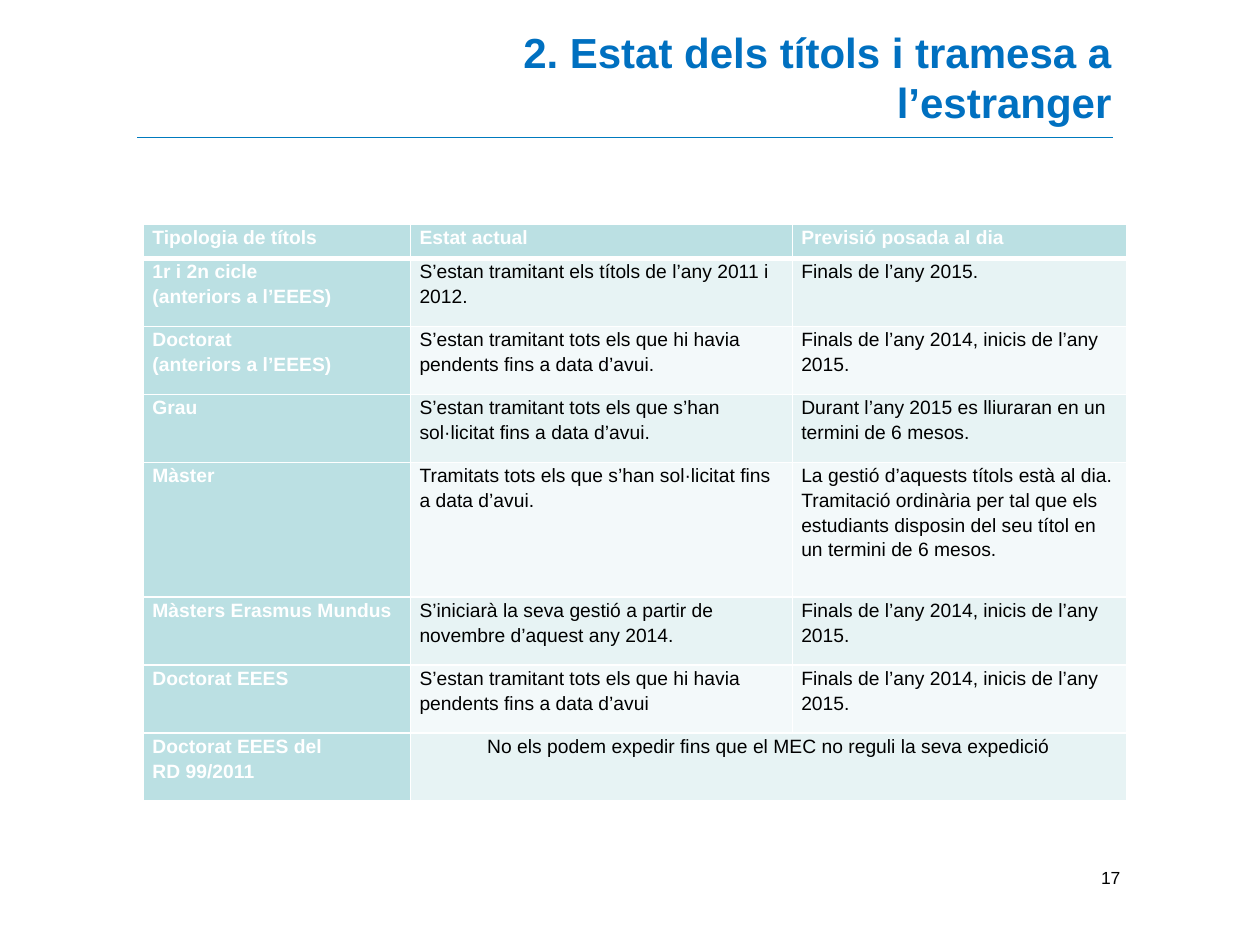
from lxml.etree import SubElement
from pptx import Presentation
from pptx.dml.color import RGBColor
from pptx.enum.shapes import MSO_CONNECTOR
from pptx.enum.text import MSO_ANCHOR, PP_ALIGN
from pptx.oxml import parse_xml
from pptx.oxml.ns import nsdecls, qn
from pptx.util import Inches, Pt

COLORS = {
    "title": "0070C0", "rule": "007ABE", "text": "000000", "white": "FFFFFF",
    "heading": "BBE0E3", "odd_row": "E7F3F4", "even_row": "F3F9FA",
}


def add_run(paragraph, text, size, color, bold=False):
    run = paragraph.add_run()
    run.text = text
    run.font.name = "Arial"
    run.font.size = Pt(size)
    run.font.bold = bold
    run.font.color.rgb = RGBColor.from_string(COLORS[color])


def set_borders(cell, top, bottom):
    """Draw white cell borders; top and bottom are widths in points."""
    properties = cell._tc.get_or_add_tcPr()
    widths = {"lnL": 1, "lnR": 1, "lnT": top, "lnB": bottom}
    for position, (side, width) in enumerate(widths.items()):
        properties.insert(position, parse_xml(
            f'<a:{side} {nsdecls("a")} w="{Pt(width)}"><a:solidFill>'
            f'<a:srgbClr val="{COLORS["white"]}"/></a:solidFill></a:{side}>'))


presentation = Presentation()
presentation.slide_width = Inches(10)
presentation.slide_height = Inches(7.5)
slide = presentation.slides.add_slide(presentation.slide_layouts[6])

# Rule under the title
rule = slide.shapes.add_connector(
    MSO_CONNECTOR.STRAIGHT, Inches(1.09), Inches(1.09), Inches(8.83), Inches(1.09))
rule.line.color.rgb = RGBColor.from_string(COLORS["rule"])
rule.line.width = Pt(0.75)
SubElement(rule._element.spPr, qn("a:effectLst"))

# Table of degree types
ROWS = [
    ["Tipologia de títols", "Estat actual", "Previsió posada al dia"],
    ["1r i 2n cicle\n(anteriors a l’EEES)",
     "S’estan tramitant els títols de l’any 2011 i 2012.",
     "Finals de l’any 2015."],
    ["Doctorat\n(anteriors a l’EEES)",
     "S’estan tramitant tots els que hi havia pendents fins a data d’avui.",
     "Finals de l’any 2014, inicis de l’any 2015."],
    ["Grau",
     "S’estan tramitant tots els que s’han sol·licitat fins a data d’avui.",
     "Durant l’any 2015 es lliuraran en un termini de 6 mesos."],
    ["Màster",
     "Tramitats tots els que s’han sol·licitat fins a data d’avui.",
     "La gestió d’aquests títols està al dia. Tramitació ordinària per tal que els "
     "estudiants disposin del seu títol en un termini de 6 mesos."],
    ["Màsters Erasmus Mundus",
     "S’iniciarà la seva gestió a partir de novembre d’aquest any 2014.",
     "Finals de l’any 2014, inicis de l’any 2015."],
    ["Doctorat EEES",
     "S’estan tramitant tots els que hi havia pendents fins a data d’avui",
     "Finals de l’any 2014, inicis de l’any 2015."],
    ["Doctorat EEES del\nRD 99/2011",
     "No els podem expedir fins que el MEC no reguli la seva expedició", ""],
]
COLUMN_WIDTHS = [2.12, 3.03, 2.65]
ROW_HEIGHTS = [0.27, 0.54, 0.54, 0.54, 1.07, 0.54, 0.54, 0.54]

table = slide.shapes.add_table(
    len(ROWS), len(COLUMN_WIDTHS), Inches(1.14), Inches(1.78),
    Inches(sum(COLUMN_WIDTHS)), Inches(sum(ROW_HEIGHTS))).table
for column, width in zip(table.columns, COLUMN_WIDTHS):
    column.width = Inches(width)
for row, height in zip(table.rows, ROW_HEIGHTS):
    row.height = Inches(height)

for row_index, texts in enumerate(ROWS):
    for column_index, text in enumerate(texts):
        cell = table.cell(row_index, column_index)
        is_heading = row_index == 0 or column_index == 0
        band = "odd_row" if row_index % 2 else "even_row"
        cell.fill.solid()
        cell.fill.fore_color.rgb = RGBColor.from_string(
            COLORS["heading" if is_heading else band])
        set_borders(cell, top=3 if row_index == 1 else 1,
                    bottom=3 if row_index == 0 else 1)
        cell.margin_left = cell.margin_right = Inches(0.07)
        cell.margin_top = cell.margin_bottom = 0
        if not text:
            continue
        for line_index, line in enumerate(text.split("\n")):
            frame = cell.text_frame
            paragraph = frame.add_paragraph() if line_index else frame.paragraphs[0]
            paragraph.line_spacing = 1.15
            add_run(paragraph, line, 11, "white" if is_heading else "text", is_heading)

last_row = len(ROWS) - 1
note = table.cell(last_row, 1)
note.merge(table.cell(last_row, 2))
note.text_frame.paragraphs[0].alignment = PP_ALIGN.CENTER

# Title and page number
for text, left, top, width, height, size, color, bold in [
    ("2. Estat dels títols i tramesa a l’estranger", 3.52, 0.16, 5.4, 0.94, 24, "title", True),
    ("17", 7.27, 6.83, 1.72, 0.52, 10, "text", False),
]:
    text_box = slide.shapes.add_textbox(
        Inches(left), Inches(top), Inches(width), Inches(height))
    text_box.text_frame.word_wrap = True
    text_box.text_frame.vertical_anchor = MSO_ANCHOR.TOP
    paragraph = text_box.text_frame.paragraphs[0]
    paragraph.alignment = PP_ALIGN.RIGHT
    add_run(paragraph, text, size, color, bold)

presentation.save("out.pptx")
